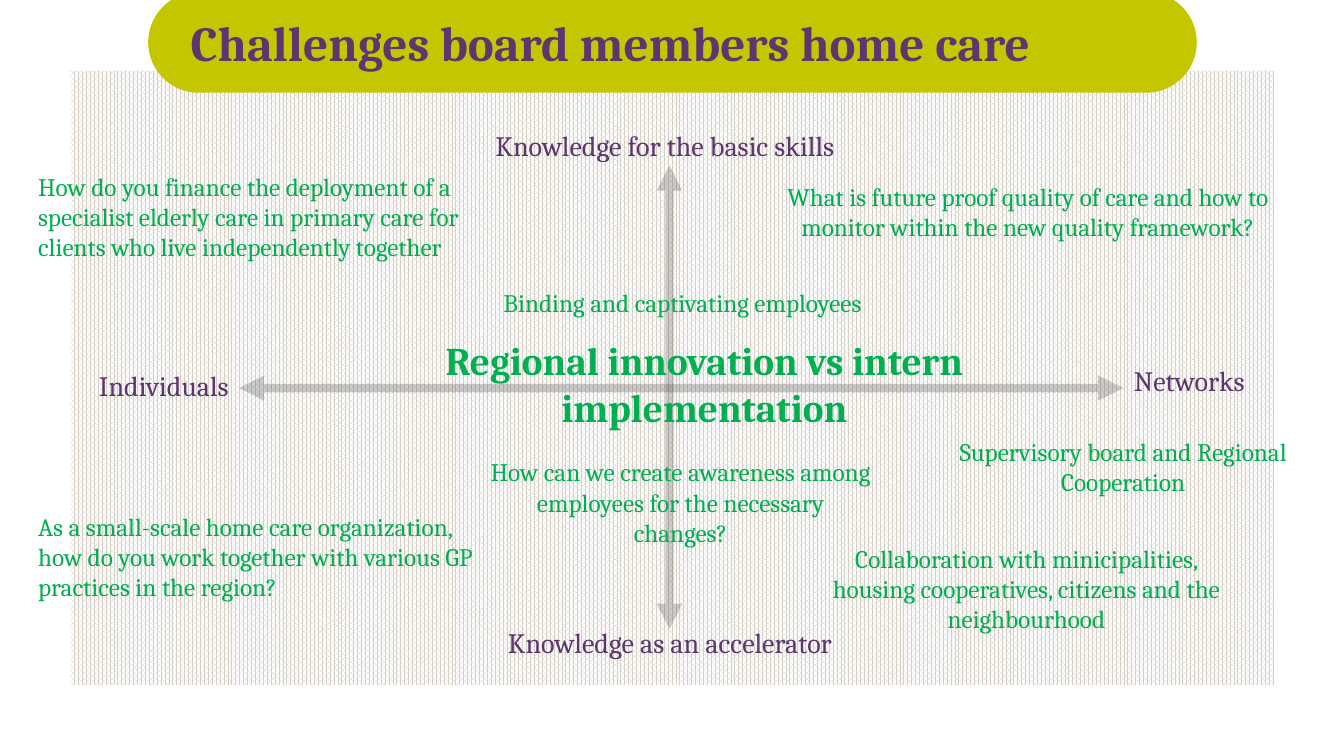
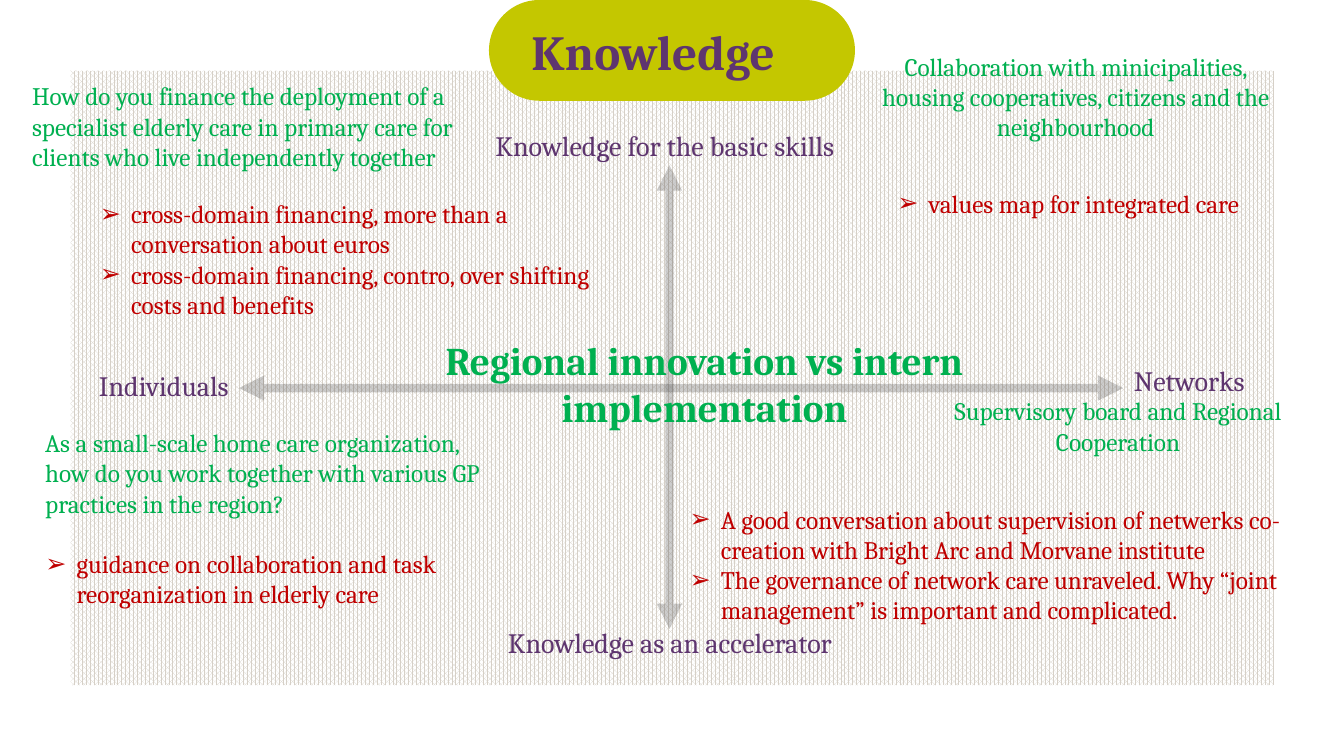
from dataclasses import dataclass

import lxml.etree
import pptx
import pptx.dml.color
import pptx.enum.dml
import pptx.enum.shapes
import pptx.enum.text
import pptx.oxml.ns
import pptx.util

Inches = pptx.util.Inches
Pt = pptx.util.Pt
Align = pptx.enum.text.PP_ALIGN
Anchor = pptx.enum.text.MSO_ANCHOR
Preset = pptx.enum.shapes.MSO_SHAPE
qn = pptx.oxml.ns.qn

FONT = "Cambria"
COLORS = {
    "panel": "D6D0C7",
    "paper": "FFFFFF",
    "band": "C4C700",
    "purple": "5E356F",
    "green": "00B050",
    "red": "C00000",
    "axis": "404040",
}

Box = tuple[float, float, float, float]


@dataclass
class Label:
    text: str
    box: Box
    size: int = 18
    color: str = "green"
    bold: bool = False
    mid: bool = True  # centred both ways, otherwise top left


@dataclass
class Points:
    items: list[str]
    box: Box


@dataclass
class Page:
    title: str
    band: Box
    labels: list[Label]
    lists: list[Points]
    layout: int


# Wording used on both slides
FINANCE = ("How do you finance the deployment of a specialist elderly care in "
           "primary care for clients who live independently together")
SMALL = ("As a small-scale home care organization, how do you work together "
         "with various GP practices in the region?")
BOARD = "Supervisory board and Regional Cooperation"
COLLAB = ("Collaboration with minicipalities, housing cooperatives, citizens "
          "and the neighbourhood")

# Axes and their labels
AXES = [(6.64, 1.64, 6.64, 6.24), (11.14, 3.85, 2.37, 3.85)]
SHARED = [
    Label("Knowledge for the basic skills", (3.01, 0.94, 7.17, 1), 20, "purple"),
    Label("Knowledge as an accelerator", (3.11, 5.87, 7.07, 1), 20, "purple"),
    Label("Individuals", (-0.17, 3.32, 3.59, 1), 20, "purple"),
    Label("Networks", (10, 3.27, 3.59, 1), 20, "purple"),
    Label("Regional innovation vs intern implementation",
          (3.79, 3.3, 6.39, 1), 28, bold=True),
]

PAGES = [
    Page(
        "Challenges board members home care",
        (1.47, -0.08, 10.4, 1),
        [
            Label("How can we create awareness among employees for the "
                  "necessary changes?", (4.76, 4.48, 3.98, 1)),
            Label(BOARD, (9.26, 4.13, 3.76, 1)),
            Label(COLLAB, (8.12, 5.34, 4.12, 1)),
            Label("Binding and captivating employees", (4.62, 2.5, 4.3, 1)),
            Label(SMALL, (0.28, 5.02, 4.76, 1.01), mid=False),
            Label(FINANCE, (0.28, 1.65, 4.66, 1.31), mid=False),
            Label("What is future proof quality of care and how to monitor "
                  "within the new quality framework?", (7.34, 1.6, 5.71, 1)),
        ],
        [],
        layout=5,
    ),
    Page(
        "Knowledge",
        (4.85, 0, 3.63, 1),
        [
            Label(BOARD, (9.21, 2.6, 3.76, 3.25)),
            Label(COLLAB, (8.61, -0.33, 4.12, 2.57)),
            Label(SMALL, (0.35, 4.19, 4.76, 1.01), mid=False),
            Label(FINANCE, (0.22, 0.75, 4.66, 1.31), mid=False),
        ],
        [
            Points(["A good conversation about supervision of netwerks "
                    "co-creation with Bright Arc and Morvane institute",
                    "The governance of network care unraveled. Why “joint "
                    "management” is important and complicated."],
                   (6.84, 5, 6.14, 1.2)),
            Points(["cross-domain financing, more than a conversation about euros",
                    "cross-domain financing, contro, over shifting costs and benefits"],
                   (0.99, 1.98, 4.98, 1.18)),
            Points(["values map for integrated care"], (8.9, 1.88, 4.01, 0.27)),
            Points(["guidance on collaboration and task reorganization in "
                    "elderly care"], (0.45, 5.45, 5.21, 0.58)),
        ],
        layout=4,
    ),
]


def rgb(name: str) -> pptx.dml.color.RGBColor:
    return pptx.dml.color.RGBColor.from_string(COLORS[name])


def place(shape, box: Box) -> None:
    shape.left, shape.top, shape.width, shape.height = map(Inches, box)


def add_back(slide, preset, box: Box, tree):
    """Add a plain shape and move it to the back of the given shape tree."""
    shape = slide.shapes.add_shape(preset, *map(Inches, box))
    shape.shadow.inherit = False
    shape.line.fill.background()
    tree.insert(2, shape.element)
    return shape


def frame(shape, anchor, side: float = 0.1, edge: float = 0.05):
    """Set wrapping, anchor and margins of a shape's text."""
    text = shape.text_frame
    text.word_wrap = True
    text.auto_size = pptx.enum.text.MSO_AUTO_SIZE.NONE
    text.vertical_anchor = anchor
    text.margin_left = text.margin_right = Inches(side)
    text.margin_top = text.margin_bottom = Inches(edge)
    return text


def style(para, size: int, color: str, bold: bool = False, align=Align.LEFT) -> None:
    para.alignment = align
    para.space_before = Pt(0)
    font = para.font
    font.name, font.size, font.bold = FONT, Pt(size), bold
    font.color.rgb = rgb(color)


def add_panel(prs) -> None:
    """Put the patterned panel behind everything, on the master."""
    panel = add_back(prs.slides[0], Preset.RECTANGLE, (0.7, 0.7, 11.93, 6.1),
                     prs.slide_master.shapes.element)
    panel.fill.patterned()
    panel.fill.pattern = pptx.enum.dml.MSO_PATTERN.PERCENT_75
    panel.fill.fore_color.rgb = rgb("panel")
    panel.fill.back_color.rgb = rgb("paper")


def add_title(slide, page: Page) -> None:
    """Lay the title over a band with fully rounded ends."""
    band = add_back(slide, Preset.ROUNDED_RECTANGLE, page.band,
                    slide.shapes.element)
    band.adjustments[0] = 0.5
    band.fill.solid()
    band.fill.fore_color.rgb = rgb("band")
    title = slide.shapes.title
    place(title, page.band)
    text = frame(title, Anchor.MIDDLE, 0.42, 0.06)
    text.text = page.title
    style(text.paragraphs[0], 35, "purple", True)


def add_axis(slide, ends: Box) -> None:
    axis = slide.shapes.add_connector(
        pptx.enum.shapes.MSO_CONNECTOR.STRAIGHT, *map(Inches, ends))
    axis.line.width = Pt(6)
    axis.line.color.rgb = rgb("axis")
    # Transparency, arrowheads and no shadow
    line = axis.element.spPr.find(qn("a:ln"))
    tint = line.find(".//" + qn("a:srgbClr"))
    lxml.etree.SubElement(tint, qn("a:alpha"), val="25000")
    for end in ("a:headEnd", "a:tailEnd"):
        lxml.etree.SubElement(line, qn(end), type="triangle")
    lxml.etree.SubElement(axis.element.spPr, qn("a:effectLst"))


def add_label(slide, label: Label) -> None:
    shape = slide.shapes.add_textbox(*map(Inches, label.box))
    text = frame(shape, Anchor.MIDDLE if label.mid else Anchor.TOP)
    text.text = label.text
    style(text.paragraphs[0], label.size, label.color, label.bold,
          Align.CENTER if label.mid else Align.LEFT)


def fill_list(shape, points: Points) -> None:
    place(shape, points.box)
    text = frame(shape, Anchor.MIDDLE, 0, 0)
    text.text = "\n".join(points.items)
    for para in text.paragraphs:
        style(para, 18, "red")
        # Arrow bullet with a hanging indent
        props = para._p.get_or_add_pPr()
        props.set("marL", str(Inches(0.31)))
        props.set("indent", str(-Inches(0.31)))
        mark = lxml.etree.Element(qn("a:buChar"), char="➢")
        props.find(qn("a:defRPr")).addprevious(mark)


def add_page(prs, page: Page) -> None:
    slide = prs.slides.add_slide(prs.slide_layouts[page.layout])
    add_title(slide, page)
    for ends in AXES:
        add_axis(slide, ends)
    for label in SHARED + page.labels:
        add_label(slide, label)
    bodies = list(slide.placeholders)[1:]
    for shape, points in zip(bodies, page.lists):
        fill_list(shape, points)


def main() -> None:
    prs = pptx.Presentation()
    prs.slide_width, prs.slide_height = Inches(13.33), Inches(7.5)
    for page in PAGES:
        add_page(prs, page)
    add_panel(prs)
    prs.save("out.pptx")


if __name__ == "__main__":
    main()
